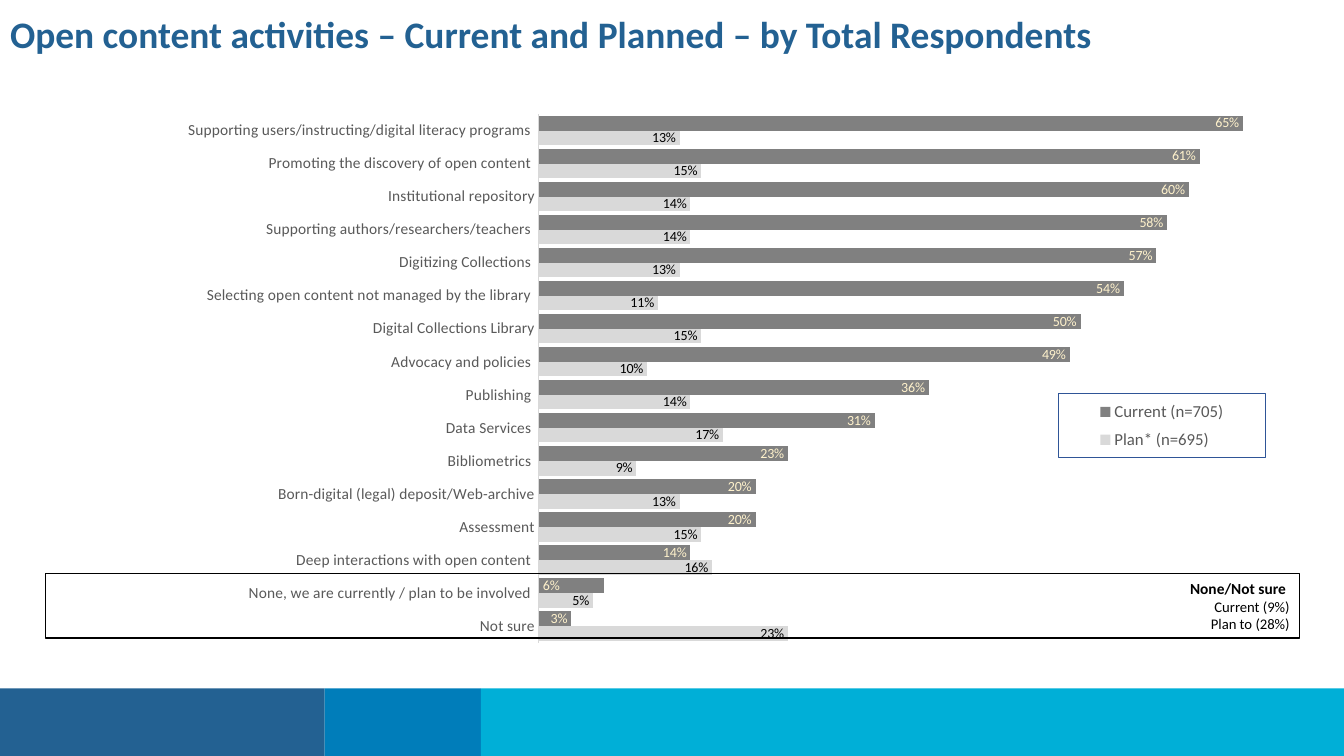
from dataclasses import dataclass

from lxml import etree
from pptx import Presentation
from pptx.chart.data import CategoryChartData
from pptx.dml.color import RGBColor
from pptx.enum import chart as ch, text as tx
from pptx.oxml import ns, parse_xml
from pptx.enum.shapes import MSO_SHAPE
from pptx.util import Inches, Pt


@dataclass(frozen=True)
class Theme:
    font: str = "Calibri"
    navy: str = "236192"
    blue: str = "007DBA"
    cyan: str = "00AFD7"
    black: str = "000000"
    grey_text: str = "595959"
    current: str = "808080"
    current_label: str = "FFF2CC"
    plan: str = "D9D9D9"
    legend_line: str = "2F5597"
    title: float = 26.7
    legend: float = 12
    category: float = 11
    note: float = 10.5
    value: float = 10


THEME = Theme()

# Activity, current share, planned share; from top to bottom
ACTIVITIES = [
    ("Supporting users/instructing/digital literacy programs ", 0.65, 0.13),
    ("Promoting the discovery of open content ", 0.61, 0.15),
    ("Institutional repository", 0.60, 0.14),
    ("Supporting authors/researchers/teachers ", 0.58, 0.14),
    ("Digitizing Collections ", 0.57, 0.13),
    ("Selecting open content not managed by the library ", 0.54, 0.11),
    ("Digital Collections Library", 0.50, 0.15),
    ("Advocacy and policies ", 0.49, 0.10),
    ("Publishing ", 0.36, 0.14),
    ("Data Services ", 0.31, 0.17),
    ("Bibliometrics ", 0.23, 0.09),
    ("Born-digital (legal) deposit/Web-archive", 0.20, 0.13),
    ("Assessment", 0.20, 0.15),
    ("Deep interactions with open content ", 0.14, 0.16),
    ("None, we are currently / plan to be involved ", 0.06, 0.05),
    ("Not sure", 0.03, 0.23),
]


def style_font(font, size, color, bold=False):
    font.name = THEME.font
    font.size = Pt(size)
    font.bold = bold
    font.color.rgb = RGBColor.from_string(color)


def manual_layout(x, y, w, h, inner=False):
    layout = etree.Element(ns.qn("c:layout"), nsmap={"c": ns.nsuri("c")})
    manual = etree.SubElement(layout, ns.qn("c:manualLayout"))
    settings = [("layoutTarget", "inner")] if inner else []
    settings += [("xMode", "edge"), ("yMode", "edge"),
                 ("x", x), ("y", y), ("w", w), ("h", h)]
    for tag, value in settings:
        etree.SubElement(manual, ns.qn("c:" + tag)).set("val", str(value))
    return parse_xml(etree.tostring(layout))


def add_footer(slide, left, top, width, height):
    edges = [0, 3.22, 4.77, width]
    for start, end, color in zip(edges, edges[1:], (THEME.navy, THEME.blue, THEME.cyan)):
        band = slide.shapes.add_shape(
            MSO_SHAPE.RECTANGLE, Inches(left + start), Inches(top),
            Inches(end - start), Inches(height))
        band.shadow.inherit = False
        band.fill.solid()
        band.fill.fore_color.rgb = RGBColor.from_string(color)
        band.line.fill.background()


def add_title(slide, left, top, width, height):
    title = slide.shapes.title
    title.left, title.top = Inches(left), Inches(top)
    title.width, title.height = Inches(width), Inches(height)
    frame = title.text_frame
    frame.text = "Open content activities – Current and Planned – by Total Respondents"
    frame.word_wrap = True
    frame.auto_size = tx.MSO_AUTO_SIZE.NONE
    frame.vertical_anchor = tx.MSO_ANCHOR.TOP
    heading = frame.paragraphs[0]
    heading.alignment = tx.PP_ALIGN.LEFT
    heading.line_spacing = 0.9
    style_font(heading.runs[0].font, THEME.title, THEME.navy, bold=True)


def style_legend(chart):
    chart.has_legend = True
    legend = chart.legend
    legend.position = ch.XL_LEGEND_POSITION.RIGHT
    legend.include_in_layout = False
    style_font(legend.font, THEME.legend, THEME.grey_text)
    root = legend._element
    for old in root.findall(ns.qn("c:layout")):
        root.remove(old)
    root.find(ns.qn("c:legendPos")).addnext(manual_layout(0.795, 0.546, 0.157, 0.109))
    border = parse_xml(
        f'<c:spPr {ns.nsdecls("c", "a")}><a:noFill/><a:ln w="9525"><a:solidFill>'
        f'<a:srgbClr val="{THEME.legend_line}"/></a:solidFill></a:ln></c:spPr>')
    root.find(ns.qn("c:txPr")).addprevious(border)


def style_series(series, color, label_color):
    series.format.fill.solid()
    series.format.fill.fore_color.rgb = RGBColor.from_string(color)
    series.invert_if_negative = False
    labels = series.data_labels
    labels.show_value = True
    labels.number_format = "0%"
    labels.number_format_is_linked = False
    labels.position = ch.XL_LABEL_POSITION.INSIDE_END
    style_font(labels.font, THEME.value, label_color)


def add_activity_chart(slide, left, top, width, height):
    rows = ACTIVITIES[::-1]
    data = CategoryChartData(number_format="0%")
    data.categories = [name for name, _, _ in rows]
    data.add_series("Plan* (n=695)", [plan for _, _, plan in rows])
    data.add_series("Current (n=705)", [current for _, current, _ in rows])
    chart = slide.shapes.add_chart(
        ch.XL_CHART_TYPE.BAR_CLUSTERED, Inches(left), Inches(top),
        Inches(width), Inches(height), data).chart
    chart.has_title = False
    style_font(chart.font, THEME.value, THEME.black)

    # Bars and their labels
    plot = chart.plots[0]
    plot.gap_width, plot.overlap = 25, 0
    plot.vary_by_categories = False
    plan, current = plot.series
    style_series(plan, THEME.plan, THEME.black)
    style_series(current, THEME.current, THEME.current_label)
    none_label = current.points[1].data_label
    style_font(none_label.font, THEME.value, THEME.current_label)
    none_label.position = ch.XL_LABEL_POSITION.INSIDE_BASE

    # Axes
    activities = chart.category_axis
    activities.major_tick_mark = ch.XL_TICK_MARK.NONE
    activities.has_major_gridlines = False
    activities.format.line.color.rgb = RGBColor.from_string(THEME.plan)
    activities.format.line.width = Pt(0.75)
    style_font(activities.tick_labels.font, THEME.category, THEME.grey_text)
    shares = chart.value_axis
    shares.minimum_scale, shares.maximum_scale = 0, 0.7
    shares.has_major_gridlines = False
    shares.visible = False

    # Plot area and legend
    area = chart._chartSpace.chart.plotArea
    for old in area.findall(ns.qn("c:layout")):
        area.remove(old)
    area.insert(0, manual_layout(0.401, 0.069, 0.575, 0.901, inner=True))
    style_legend(chart)


def add_not_sure_box(slide, left, top, width, height):
    summary = slide.shapes.add_shape(
        MSO_SHAPE.RECTANGLE, Inches(left), Inches(top), Inches(width), Inches(height))
    summary.shadow.inherit = False
    summary.fill.background()
    summary.line.color.rgb = RGBColor.from_string(THEME.black)
    summary.line.width = Pt(1)
    frame = summary.text_frame
    frame.word_wrap = True
    frame.vertical_anchor = tx.MSO_ANCHOR.MIDDLE
    frame.text = "None/Not sure \nCurrent (9%)\nPlan to (28%)"
    for index, line in enumerate(frame.paragraphs):
        line.alignment = tx.PP_ALIGN.RIGHT
        size = THEME.note if index else THEME.category
        style_font(line.runs[0].font, size, THEME.black, bold=index == 0)


def main():
    deck = Presentation()
    deck.slide_width, deck.slide_height = Inches(13.33), Inches(7.5)
    slide = deck.slides.add_slide(deck.slide_layouts[5])
    add_footer(slide, 0, 6.83, 13.33, 0.67)
    add_title(slide, 0, 0.11, 13.18, 1.11)
    add_activity_chart(slide, 0.1, 0.73, 13.08, 5.82)
    add_not_sure_box(slide, 0.45, 5.69, 12.44, 0.64)
    deck.save("out.pptx")


if __name__ == "__main__":
    main()
